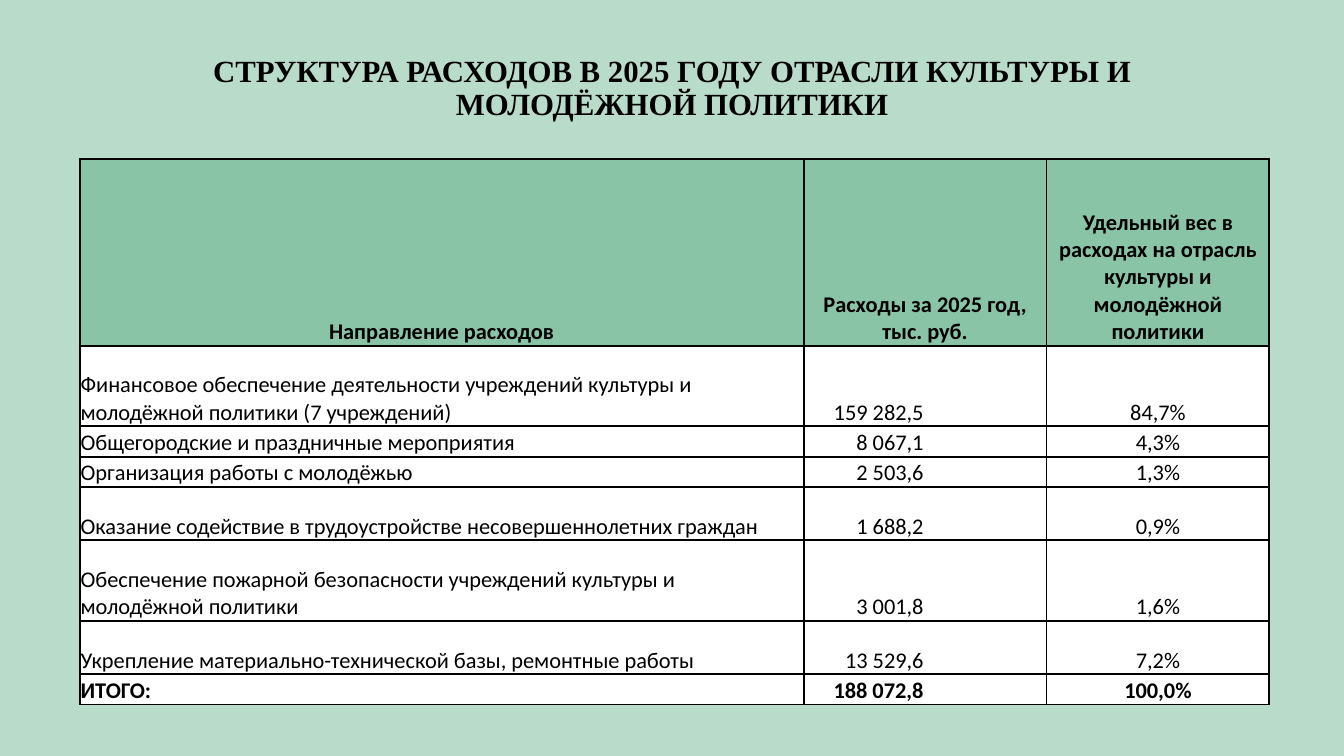
from pptx import Presentation
from pptx.dml.color import RGBColor as RGB
from pptx.enum.text import MSO_ANCHOR as Anchor, PP_ALIGN as Align
from pptx.oxml import parse_xml
from pptx.oxml.ns import nsdecls
from pptx.util import Inches, Pt

HUES = {"back": "B9DCCA", "head": "8AC4A7", "cell": "FFFFFF", "ink": "000000"}
TITLE = "СТРУКТУРА РАСХОДОВ В 2025 ГОДУ ОТРАСЛИ КУЛЬТУРЫ И МОЛОДЁЖНОЙ ПОЛИТИКИ"
ROWS = [
    (1.85, "Направление расходов", "Расходы за 2025 год, тыс. руб.",
     "Удельный вес в расходах на отрасль культуры и молодёжной политики"),
    (0.8, "Финансовое обеспечение деятельности учреждений культуры и "
     "молодёжной политики (7 учреждений)", "159 282,5", "84,7%"),
    (0.3, "Общегородские и праздничные мероприятия", "8 067,1", "4,3%"),
    (0.3, "Организация работы с молодёжью", "2 503,6", "1,3%"),
    (0.53, "Оказание содействие в трудоустройстве несовершеннолетних граждан",
     "1 688,2", "0,9%"),
    (0.8, "Обеспечение пожарной безопасности учреждений культуры и "
     "молодёжной политики", "3 001,8", "1,6%"),
    (0.53, "Укрепление материально-технической базы, ремонтные работы",
     "13 529,6", "7,2%"),
    (0.3, "ИТОГО:", "188 072,8", "100,0%"),
]
WIDTHS = [7.18, 2.41, 2.21]
ALIGNS = [Align.LEFT, Align.RIGHT, Align.CENTER]


def style(par, face, size, bold, align):
    par.alignment = align
    for run in par.runs:
        font = run.font
        font.name, font.size, font.bold = face, Pt(size), bold
        font.color.rgb = RGB.from_string(HUES["ink"])


def frame(cell):
    """Draw a line on all four sides of the cell; call before setting its fill."""
    props = cell._tc.get_or_add_tcPr()
    for side in "LRTB":
        props.append(parse_xml(
            f'<a:ln{side} {nsdecls("a")} w="{Pt(1.5)}"><a:solidFill>'
            f'<a:srgbClr val="{HUES["ink"]}"/></a:solidFill></a:ln{side}>'))


deck = Presentation()
deck.slide_width, deck.slide_height = Inches(13.33), Inches(7.5)
slide = deck.slides.add_slide(deck.slide_layouts[6])
back = slide.background.fill
back.solid()
back.fore_color.rgb = RGB.from_string(HUES["back"])

box = slide.shapes.add_textbox(Inches(1.25), Inches(0.68), Inches(10.83), Inches(0.41))
text = box.text_frame
text.word_wrap = True
text.vertical_anchor = Anchor.MIDDLE
text.text = TITLE
text.paragraphs[0].line_spacing = 0.9
style(text.paragraphs[0], "Times New Roman", 22, True, Align.CENTER)

table = slide.shapes.add_table(
    len(ROWS), len(WIDTHS), Inches(0.79), Inches(1.58), Inches(11.8), Inches(5.42)).table
for col, width in zip(table.columns, WIDTHS):
    col.width = Inches(width)

for i, (height, *words) in enumerate(ROWS):
    table.rows[i].height = Inches(height)
    head = i == 0
    bold = head or i == len(ROWS) - 1
    for j, word in enumerate(words):
        cell = table.cell(i, j)
        cell.text = word
        cell.vertical_anchor = Anchor.BOTTOM
        cell.margin_left = cell.margin_top = Inches(0.01)
        cell.margin_right = Inches(1.22 if j == 1 and not head else 0.01)
        cell.margin_bottom = 0
        frame(cell)
        cell.fill.solid()
        cell.fill.fore_color.rgb = RGB.from_string(HUES["head" if head else "cell"])
        style(cell.text_frame.paragraphs[0], "Calibri", 16, bold,
              Align.CENTER if head else ALIGNS[j])

deck.save("out.pptx")
